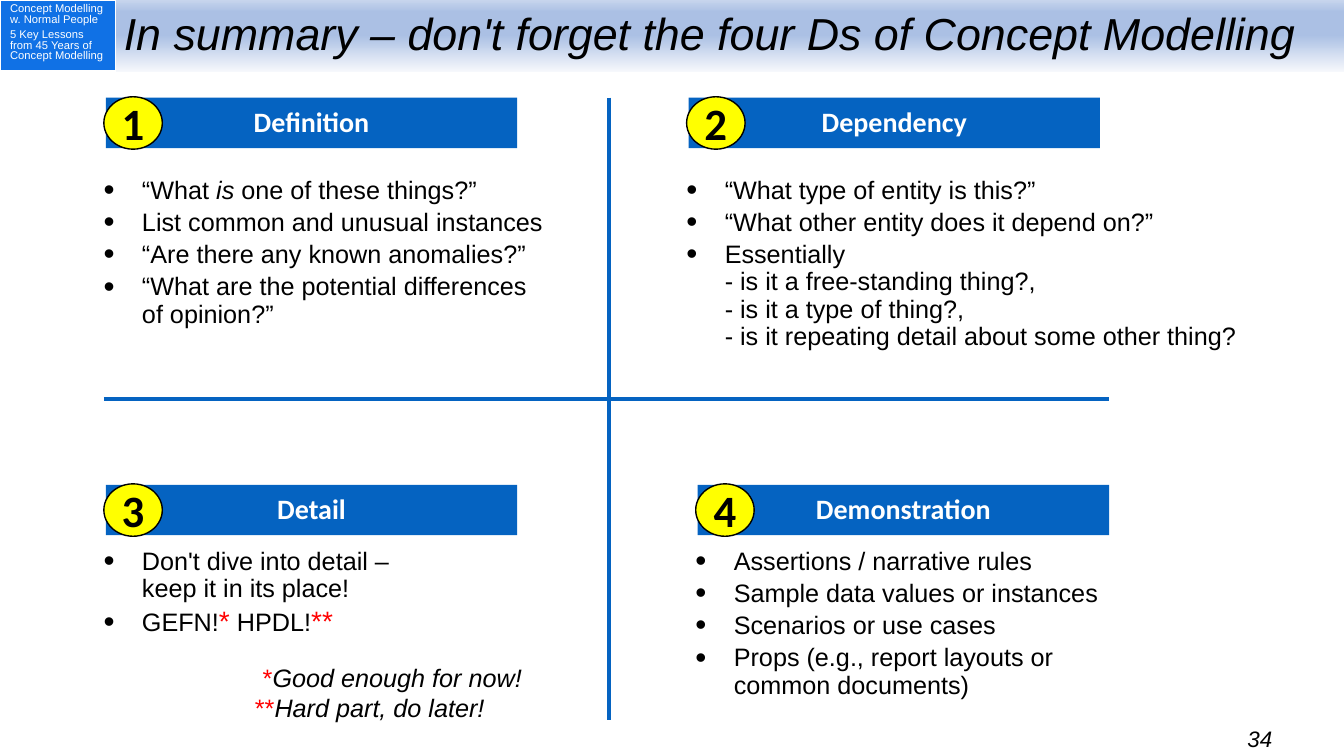
"""Build the four Ds of Concept Modelling summary slide."""
from lxml import etree
from pptx import Presentation
from pptx.dml.color import RGBColor
from pptx.enum.shapes import MSO_CONNECTOR, MSO_SHAPE
from pptx.enum.text import MSO_ANCHOR, PP_ALIGN
from pptx.oxml.ns import qn
from pptx.util import Inches, Pt

RECTANGLE, OVAL = MSO_SHAPE.RECTANGLE, MSO_SHAPE.OVAL
STRAIGHT = MSO_CONNECTOR.STRAIGHT
MIDDLE, TOP = MSO_ANCHOR.MIDDLE, MSO_ANCHOR.TOP
CENTER, LEFT = PP_ALIGN.CENTER, PP_ALIGN.LEFT

WIDTH, HEIGHT = 13.33, 7.5
BLUE, YELLOW, RED, BLACK, WHITE = "0563C1", "FFFF00", "FF0000", "000000", "FFFFFF"
CORNER_BLUE = "1071E5"
BAND_STOPS = [(0, "F6F8FC"), (51, "ABC0E4"), (83, "ABC0E4"), (100, "C7D5ED")]

BODY = {"name": "Arial", "size": 18, "color": BLACK}
ITALIC = {"italic": True}
STAR = {"size": 20, "color": RED}
NOTE_STAR = {"color": RED}
SMALL = {"name": "Arial", "size": 8, "color": WHITE}
TITLE = {"name": "Arial", "size": 32, "color": BLACK, "italic": True}
NUMBER = {**TITLE, "size": 16}
HEADING = {"name": "Calibri", "size": 20, "color": WHITE, "bold": True}
BADGE = {"name": "Calibri", "size": 32, "color": BLACK, "bold": True}

CORNER = ["Concept Modelling w. Normal People",
          "5 Key Lessons from 45 Years of\nConcept Modelling"]
HEADLINE = "In summary – don't forget the four Ds of Concept Modelling"
PAGE_NUMBER = "34"
QUADRANTS = [
    ("1", "Definition", 1.05, 0, 4.78, [
        [("“What ", {}), ("is", ITALIC), (" one of these things?”", {})],
        "List common and unusual instances",
        "“Are there any known anomalies?”",
        "“What are the potential differences of opinion?”"]),
    ("2", "Dependency", 6.83, 0, 5.93, [
        "“What type of entity is this?”",
        "“What other entity does it depend on?”",
        "Essentially\n- is it a free-standing thing?,\n- is it a type of thing?,\n"
        "- is it repeating detail about some other thing?"]),
    ("3", "Detail", 1.05, 1, 4, [
        "Don't dive into detail –\nkeep it in its place!",
        [("GEFN!", {}), ("*", STAR), (" HPDL!", {}), ("**", STAR)]]),
    ("4", "Demonstration", 6.92, 1, 4.44, [
        "Assertions / narrative rules",
        "Sample data values or instances",
        "Scenarios or use cases",
        "Props (e.g., report layouts or common documents)"]),
]
FOOTNOTES = [
    [(" ", STAR), ("*", NOTE_STAR), ("Good enough for now!", ITALIC)],
    [("**", NOTE_STAR), ("Hard part, do later!", ITALIC)],
]
ROWS = [(0.97, 1.71), (4.81, 5.39)]
AXES = [(1.03, 3.96, 11, 3.96), (6.04, 0.97, 6.04, 7.14)]


def rgb(value):
    """Return the colour for a hex string."""
    return RGBColor.from_string(value)


def inches(*lengths):
    """Return lengths converted from inches."""
    return [Inches(length) for length in lengths]


def add_span(para, text, style):
    """Add formatted text, breaking lines at newlines."""
    for index, line in enumerate(text.split("\n")):
        if index:
            para.add_line_break()
        span = para.add_run()
        span.text = line
        for key, value in style.items():
            if key == "color":
                span.font.color.rgb = rgb(value)
            else:
                setattr(span.font, key, Pt(value) if key == "size" else value)


def add_bullet(para):
    """Give a paragraph a hanging round bullet."""
    properties = para._p.get_or_add_pPr()
    properties.set("marL", str(Inches(0.5)))
    properties.set("indent", str(-Inches(0.38)))
    color = etree.SubElement(properties, qn("a:buClr"))
    etree.SubElement(color, qn("a:srgbClr"), val=BLACK)
    etree.SubElement(properties, qn("a:buSzPct"), val="125000")
    etree.SubElement(properties, qn("a:buFont"), typeface="Arial")
    etree.SubElement(properties, qn("a:buChar"), char="•")


def write(frame, paragraphs, style, align=LEFT, spacing=1.0, before=0, bullets=False):
    """Fill a text frame with paragraphs."""
    for index, content in enumerate(paragraphs):
        para = frame.add_paragraph() if index else frame.paragraphs[0]
        if bullets:
            add_bullet(para)
        layout = {"alignment": align, "line_spacing": spacing,
                  "space_before": Pt(before if index else 0)}
        for key, value in layout.items():
            setattr(para, key, value)
        spans = [(content, {})] if isinstance(content, str) else content
        for text, changes in spans:
            add_span(para, text, {**style, **changes})


def add_text(page, place, paragraphs, style, anchor=TOP, **layout):
    """Add a wrapping text box."""
    frame = page.shapes.add_textbox(*inches(*place)).text_frame
    frame.word_wrap = True
    frame.vertical_anchor = anchor
    write(frame, paragraphs, style, **layout)
    return frame


def add_box(page, kind, place, fill, outline=None):
    """Add a flat filled shape."""
    box = page.shapes.add_shape(kind, *inches(*place))
    box.shadow.inherit = False
    box.fill.solid()
    box.fill.fore_color.rgb = rgb(fill)
    if outline:
        box.line.color.rgb = rgb(outline)
        box.line.width = Pt(1)
    else:
        box.line.fill.background()
    return box


def add_label(page, kind, place, fill, text, style, outline=None, spacing=1.0):
    """Add a shape with one centred line."""
    frame = add_box(page, kind, place, fill, outline).text_frame
    frame.word_wrap = False
    frame.vertical_anchor = MIDDLE
    write(frame, [text], style, CENTER, spacing)


def add_header(page):
    """Add the corner table, gradient band and headline."""
    table = page.shapes.add_table(1, 1, *inches(0, 0, 1.15, 0.7)).table
    table.first_row = table.horz_banding = False
    cell = table.cell(0, 0)
    cell.fill.solid()
    cell.fill.fore_color.rgb = rgb(CORNER_BLUE)
    cell.margin_top = cell.margin_bottom = Inches(0.04)
    write(cell.text_frame, CORNER, SMALL, spacing=0.85, before=3.2)

    band = add_box(page, RECTANGLE, (1.15, 0, WIDTH - 1.15, 0.71), WHITE)
    band.fill.gradient()
    band.fill.gradient_angle = 90
    stops = band._element.spPr.find(".//" + qn("a:gsLst"))
    for stop in list(stops):
        stops.remove(stop)
    for position, color in BAND_STOPS:
        stop = etree.SubElement(stops, qn("a:gs"), pos=str(position * 1000))
        etree.SubElement(stop, qn("a:srgbClr"), val=color)
    add_text(page, (1.13, 0, WIDTH - 1.13, 0.71), [HEADLINE], TITLE, MIDDLE, spacing=0.9)


def add_axis(page, ends):
    """Add one dividing line."""
    axis = page.shapes.add_connector(STRAIGHT, *inches(*ends))
    axis.line.color.rgb = rgb(BLUE)
    axis.line.width = Pt(3)
    etree.SubElement(axis._element.spPr, qn("a:effectLst"))


def add_quadrant(page, number, heading, left, row, width, points):
    """Add a numbered heading and its bullet list."""
    top, list_top = ROWS[row]
    add_label(page, RECTANGLE, (left, top, 4.08, 0.5), BLUE, heading, HEADING, spacing=0.9)
    add_text(page, (left - 0.24, list_top, width, 1.65), points, BODY,
             spacing=0.9, before=3.6, bullets=True)
    add_label(page, OVAL, (left - 0.02, top - 0.01, 0.58, 0.52), YELLOW, number, BADGE, BLACK)


def main():
    """Build and save the deck."""
    deck = Presentation()
    deck.slide_width, deck.slide_height = inches(WIDTH, HEIGHT)
    page = deck.slides.add_slide(deck.slide_layouts[6])
    add_header(page)
    frame = add_text(page, (11.66, 7.19, 1.67, 0.27), [PAGE_NUMBER], NUMBER, align=CENTER)
    for side in ("left", "top", "right", "bottom"):
        setattr(frame, "margin_" + side, 0)
    for ends in AXES:
        add_axis(page, ends)
    for quadrant in QUADRANTS:
        add_quadrant(page, *quadrant)
    add_text(page, (2.43, 6.49, 3.05, 0.74), FOOTNOTES, BODY)
    deck.save("out.pptx")


if __name__ == "__main__":
    main()
